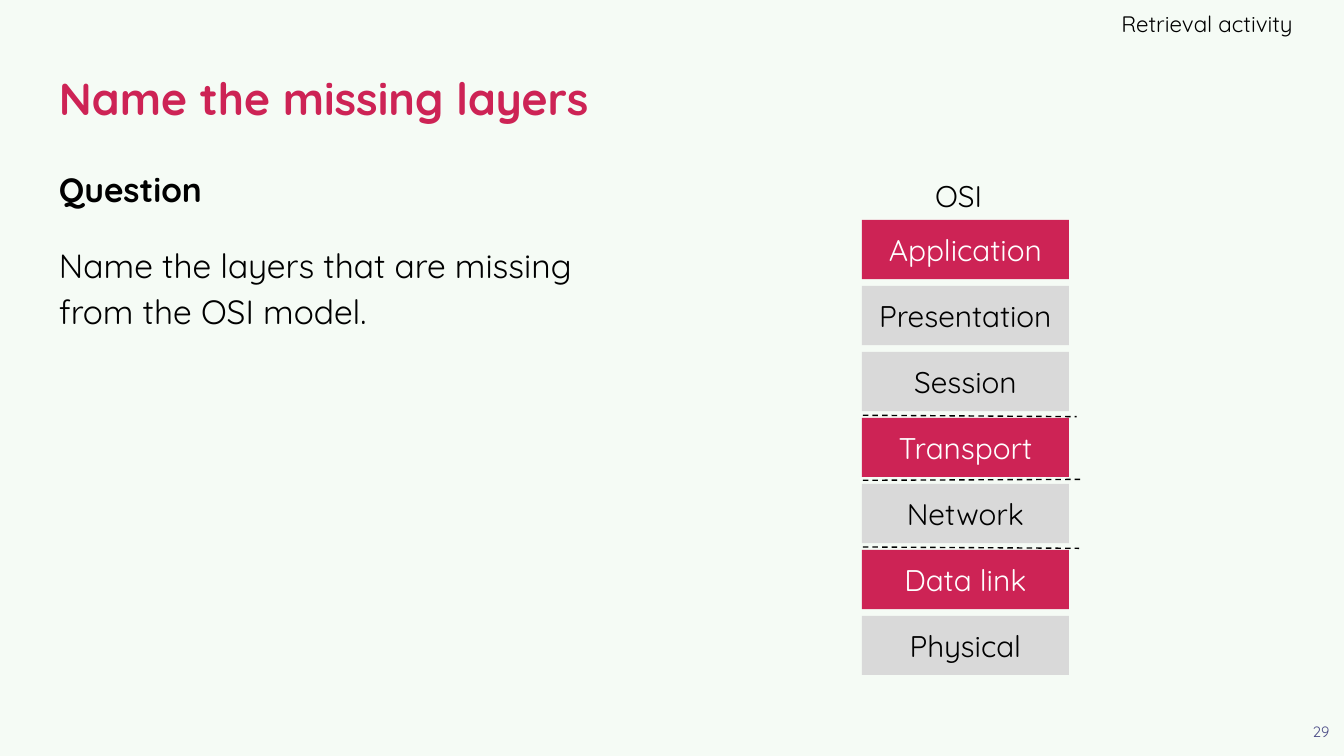
from lxml import etree
from pptx import Presentation
from pptx.dml.color import RGBColor
from pptx.enum.dml import MSO_LINE_DASH_STYLE as Dash
from pptx.enum.shapes import MSO_CONNECTOR as Connector, MSO_SHAPE as Shape
from pptx.enum.text import MSO_ANCHOR as Anchor, PP_ALIGN as Align
from pptx.oxml.ns import qn
from pptx.util import Inches, Pt

COLOURS = {
    "background": "F5FBF5",
    "accent": "CD2355",
    "grey": "D9D9D9",
    "black": "000000",
    "white": "FFFFFF",
    "number": "494985",
}
FONT = "Quicksand"
COLUMNS, ROWS = 100, 56.25
LAYERS = ["Application", "Presentation", "Session", "Transport",
          "Network", "Data link", "Physical"]
SHOWN = {"Application", "Transport", "Data link"}
STACK_LEFT, STACK_TOP, LAYER_WIDTH, LAYER_HEIGHT, LAYER_STEP = 64.13, 16.37, 15.4, 4.4, 4.91
DIVIDERS = [(30.9, 80.1, 31), (35.74, 80.4, 35.67), (40.7, 80.3, 40.8)]


def colour(name):
    return RGBColor.from_string(COLOURS[name])


def write(frame, *texts, size=16, ink="black", bold=(False,), align=Align.LEFT,
          anchor=Anchor.TOP, spacing=None, before=(0,), after=(0,), right=0.1, wrap=True):
    """Fill a text frame, one paragraph per text; bold, before and after go by paragraph."""
    frame.word_wrap = wrap
    frame.vertical_anchor = anchor
    frame.margin_left = frame.margin_top = frame.margin_bottom = Inches(0.1)
    frame.margin_right = Inches(right)
    for index, text in enumerate(texts):
        paragraph = frame.add_paragraph() if index else frame.paragraphs[0]
        paragraph.alignment = align
        paragraph.line_spacing = spacing
        paragraph.space_before = Pt(before[index % len(before)])
        paragraph.space_after = Pt(after[index % len(after)])
        run = paragraph.add_run()
        run.text = text
        run.font.name = FONT
        run.font.size = Pt(size)
        run.font.bold = bold[index % len(bold)]
        run.font.color.rgb = colour(ink)


class Deck:
    """Holds the presentation, its grid and the current slide."""

    def __init__(self):
        self.presentation = Presentation()
        self.presentation.slide_width = Inches(10)
        self.presentation.slide_height = Inches(10) * 9 // 16
        self.slide = self.presentation.slides.add_slide(self.presentation.slide_layouts[6])
        self.slide.background.fill.solid()
        self.slide.background.fill.fore_color.rgb = colour("background")

    def across(self, columns):
        return round(self.presentation.slide_width * columns / COLUMNS)

    def down(self, rows):
        return round(self.presentation.slide_height * rows / ROWS)

    def place(self, left, top, width, height):
        return self.across(left), self.down(top), self.across(width), self.down(height)

    def text(self, box, *texts, **style):
        shape = self.slide.shapes.add_textbox(*self.place(*box))
        write(shape.text_frame, *texts, **style)

    def block(self, box, text, fill, ink):
        shape = self.slide.shapes.add_shape(Shape.RECTANGLE, *self.place(*box))
        shape.shadow.inherit = False
        shape.fill.solid()
        shape.fill.fore_color.rgb = colour(fill)
        shape.line.fill.background()
        write(shape.text_frame, text, ink=ink, align=Align.CENTER, anchor=Anchor.MIDDLE)

    def dashed_line(self, left, top, right, bottom):
        line = self.slide.shapes.add_connector(
            Connector.STRAIGHT, self.across(left), self.down(top),
            self.across(right), self.down(bottom))
        line.line.color.rgb = colour("black")
        line.line.width = Pt(0.75)
        line.line.dash_style = Dash.DASH
        etree.SubElement(line._element.spPr, qn("a:effectLst"))


def main():
    deck = Deck()
    deck.text((3.4, 11.1, 44.8, 40), "Question",
              "Name the layers that are missing from the OSI model.",
              size=18, bold=(True, False), spacing=1.15, before=(0, 16), after=(0, 16))
    deck.text((3.4, 3.45, 93.2, 7.6), "Name the missing layers",
              size=24, ink="accent", bold=(True,), anchor=Anchor.MIDDLE)
    deck.text((96.6, 53.1, 3.4, 3.4), "29", size=8, ink="number", align=Align.CENTER)
    deck.text((74.8, 0, 21.4, 3.45), "Retrieval activity",
              size=12, align=Align.RIGHT, anchor=Anchor.MIDDLE, right=0)
    deck.text((68.6, 11.8, 6.7, 4.7), "OSI", spacing=1.15, after=(16,), wrap=False)
    for index, layer in enumerate(LAYERS):
        fill, ink = ("accent", "white") if layer in SHOWN else ("grey", "black")
        deck.block((STACK_LEFT, STACK_TOP + index * LAYER_STEP, LAYER_WIDTH, LAYER_HEIGHT),
                   layer, fill, ink)
    for top, right, bottom in DIVIDERS:
        deck.dashed_line(64.2, top, right, bottom)
    deck.presentation.save("out.pptx")


if __name__ == "__main__":
    main()
